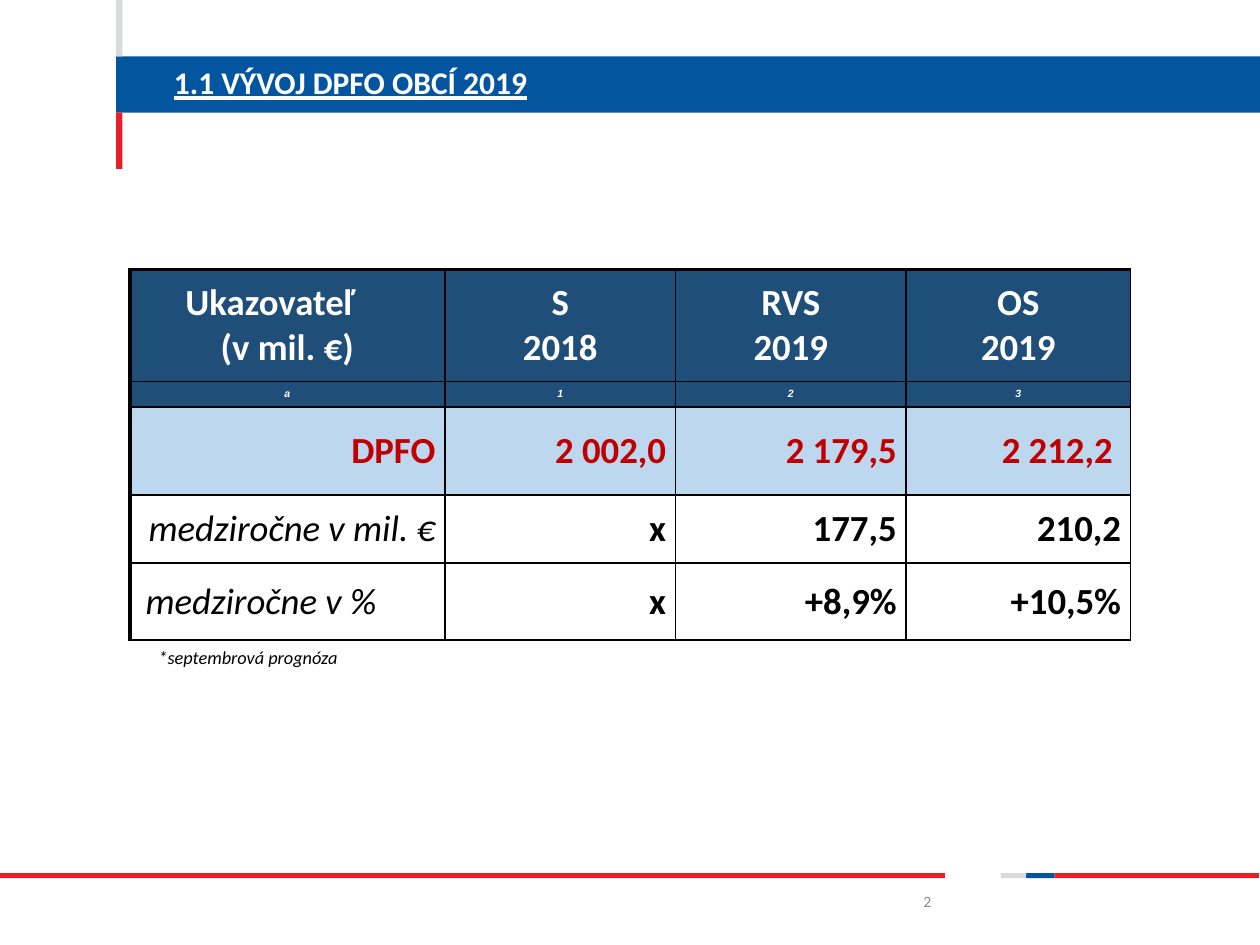
import pptx
import pptx.util
import pptx.dml.color
import pptx.enum.shapes
import pptx.enum.text
import pptx.oxml.ns
from lxml import etree

Pt = pptx.util.Pt
RGBColor = pptx.dml.color.RGBColor
ALIGN = pptx.enum.text.PP_ALIGN
MIDDLE = pptx.enum.text.MSO_ANCHOR.MIDDLE
qn = pptx.oxml.ns.qn

BLUE = RGBColor(0x04, 0x55, 0x9F)
RED = RGBColor(0xE5, 0x20, 0x29)
SILVER = RGBColor(0xD9, 0xDB, 0xDD)
NAVY = RGBColor(0x1F, 0x4E, 0x79)
SKY = RGBColor(0xBD, 0xD7, 0xEE)
CRIMSON = RGBColor(0xC0, 0x00, 0x00)
GRAY = RGBColor(0x8C, 0x8C, 0x8C)
WHITE = RGBColor(0xFF, 0xFF, 0xFF)
BLACK = RGBColor(0x00, 0x00, 0x00)

HEADING = "1.1 VÝVOJ DPFO OBCÍ 2019"
FOOTNOTE = "*septembrová prognóza"
PAGE_NUMBER = "2"

INDICATORS = [
    ["Ukazovateľ\n(v mil. €)", "S\n2018", "RVS\n2019", "OS\n2019"],
    ["a", "1", "2", "3"],
    ["DPFO", "2 002,0", "2 179,5", "2 212,2 "],
    ["medziročne v mil. €", "x", "177,5", "210,2"],
    ["medziročne v %", "x", "+8,9%", "+10,5%"],
]
COLUMN_WIDTHS = [180, 131.8, 131.8, 128.2]
ROW_HEIGHTS = [64, 14.4, 50.4, 38.9, 43.9]

BIG = dict(size=21, bold=True)
ROW_STYLES = [
    (NAVY, ALIGN.CENTER, dict(BIG, color=WHITE)),
    (NAVY, ALIGN.CENTER, dict(size=6, bold=True, italic=True, color=WHITE, font="Arial")),
    (SKY, ALIGN.RIGHT, dict(BIG, color=CRIMSON)),
    (None, ALIGN.RIGHT, BIG),
    (None, ALIGN.RIGHT, BIG),
]
LABEL_STYLE = dict(size=21, italic=True)
HEADER_SHIFT = 19.5
PERCENT_SHIFT = 33.7

BAND_LEFT, BAND_TOP, BAND_HEIGHT = 66.4, 32.2, 32.2
RULE_TOP, RULE_HEIGHT = 499, 2.9
BARS = [
    (BAND_LEFT, BAND_TOP, 720 - BAND_LEFT, BAND_HEIGHT, BLUE),
    (602.6, RULE_TOP, 116.8, RULE_HEIGHT, RED),
    (586.4, RULE_TOP, 16.2, RULE_HEIGHT, BLUE),
    (572, RULE_TOP, 14.4, RULE_HEIGHT, SILVER),
    (0, RULE_TOP, 540, RULE_HEIGHT, RED),
    (BAND_LEFT, BAND_TOP + BAND_HEIGHT, 3.6, BAND_HEIGHT, RED),
    (BAND_LEFT, 0, 3.6, BAND_HEIGHT, SILVER),
]


def add_text(paragraph, text, size, color=BLACK, font="Calibri",
             bold=False, italic=False, underline=False):
    run = paragraph.add_run()
    run.text = text
    run.font.name = font
    run.font.size = Pt(size)
    run.font.bold = bold
    run.font.italic = italic
    run.font.underline = underline
    run.font.color.rgb = color


def add_bar(slide, left, top, width, height, color):
    bar = slide.shapes.add_shape(pptx.enum.shapes.MSO_SHAPE.RECTANGLE,
                                 Pt(left), Pt(top), Pt(width), Pt(height))
    bar.shadow.inherit = False
    bar.fill.solid()
    bar.fill.fore_color.rgb = color
    bar.line.fill.background()


def set_borders(cell, row, column):
    widths = {"a:lnL": 1 if column else 2.25, "a:lnR": 1,
              "a:lnT": 1 if row else 2.25, "a:lnB": 1}
    properties = cell._tc.get_or_add_tcPr()
    for position, (side, width) in enumerate(widths.items()):
        line = etree.Element(qn(side), w=str(int(Pt(width))))
        fill = etree.SubElement(line, qn("a:solidFill"))
        etree.SubElement(fill, qn("a:srgbClr"), val=str(BLACK))
        properties.insert(position, line)


def fill_cell(cell, row, column):
    fill, alignment, style = ROW_STYLES[row]
    if row >= 3 and column == 0:
        style = LABEL_STYLE
    if fill is None:
        cell.fill.background()
    else:
        cell.fill.solid()
        cell.fill.fore_color.rgb = fill
    cell.vertical_anchor = MIDDLE
    shift = {(0, 0): HEADER_SHIFT, (4, 0): PERCENT_SHIFT}.get((row, column), 0)
    cell.margin_left = Pt(5.4)
    cell.margin_right = Pt(5.4 + shift)
    cell.margin_top = cell.margin_bottom = Pt(2.7)
    for index, line in enumerate(INDICATORS[row][column].split("\n")):
        frame = cell.text_frame
        paragraph = frame.add_paragraph() if index else frame.paragraphs[0]
        paragraph.alignment = alignment
        if index and shift:
            paragraph._p.get_or_add_pPr().set("marL", str(int(Pt(shift))))
        add_text(paragraph, line, **style)
    set_borders(cell, row, column)


def add_label(slide, left, top, width, height):
    label = slide.shapes.add_textbox(Pt(left), Pt(top), Pt(width), Pt(height))
    label.text_frame.word_wrap = True
    return label.text_frame


def main():
    deck = pptx.Presentation()
    deck.slide_width, deck.slide_height = Pt(720), Pt(540)
    slide = deck.slides.add_slide(deck.slide_layouts[5])

    for bar in BARS:
        add_bar(slide, *bar)

    heading = slide.shapes.title
    heading.left, heading.top = Pt(92.2), Pt(32.4)
    heading.width, heading.height = Pt(594.7), Pt(31.7)
    heading.text_frame.vertical_anchor = MIDDLE
    heading_line = heading.text_frame.paragraphs[0]
    heading_line.alignment = ALIGN.LEFT
    heading_line.line_spacing = 0.9
    add_text(heading_line, HEADING, 18, WHITE, bold=True, underline=True)
    slide.shapes._spTree.append(heading._element)

    page = add_label(slide, 492.5, 500.4, 46.8, 28.8)
    page.vertical_anchor = MIDDLE
    page.paragraphs[0].alignment = ALIGN.RIGHT
    add_text(page.paragraphs[0], PAGE_NUMBER, 9, GRAY)

    table = slide.shapes.add_table(
        len(ROW_HEIGHTS), len(COLUMN_WIDTHS), Pt(74.2), Pt(154.1),
        Pt(sum(COLUMN_WIDTHS)), Pt(sum(ROW_HEIGHTS))).table
    table.horz_banding = False
    for column, width in enumerate(COLUMN_WIDTHS):
        table.columns[column].width = Pt(width)
    for row, height in enumerate(ROW_HEIGHTS):
        table.rows[row].height = Pt(height)
        for column in range(len(COLUMN_WIDTHS)):
            fill_cell(table.cell(row, column), row, column)

    footnote = add_label(slide, 83.5, 365.8, 197.3, 20.2)
    add_text(footnote.paragraphs[0], FOOTNOTE, 10.5, italic=True)

    deck.save("out.pptx")


if __name__ == "__main__":
    main()
